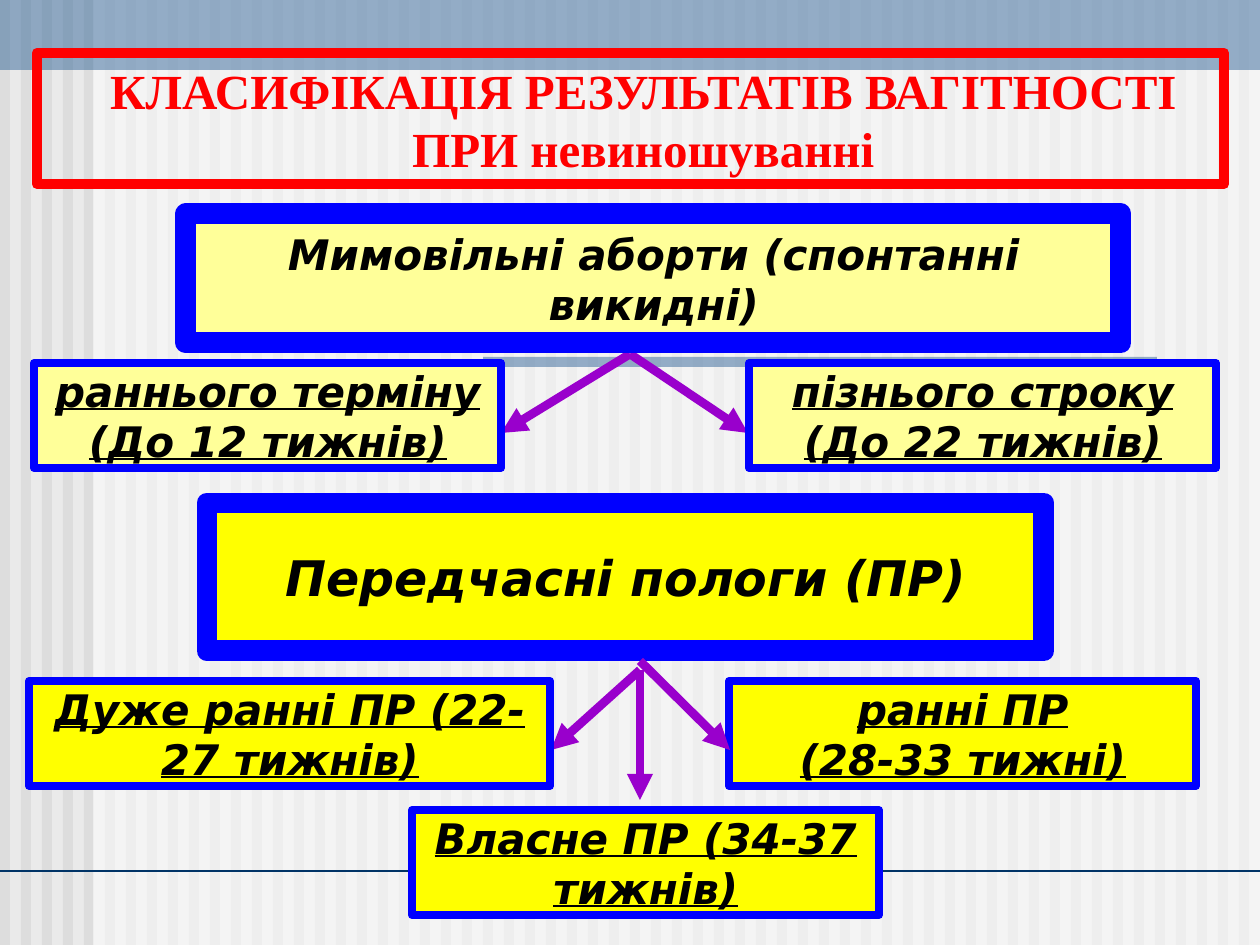
"""Build a slide that classifies pregnancy outcomes in miscarriage."""
import lxml.etree
import pptx
import pptx.dml.color
import pptx.enum.shapes
import pptx.enum.text
import pptx.oxml.ns
import pptx.util

SCALE = 914400 / 126
THEME = {
    "background": "EAEAEA", "stripe": "DDDDDD", "veil": "FFFFFF", "band": "336699", "rule": "003366",
    "title": "FF0000", "border": "0000FF", "arrow": "9900CC", "text": "000000",
    "abortion": "FFFF99", "preterm": "FFFF00",
    "title_font": "Times New Roman", "body_font": "DejaVu Sans", "large": 28, "normal": 24,
}
RGB = pptx.dml.color.RGBColor.from_string
A = pptx.oxml.ns.nsdecls("a").split('"')[1]


def add_box(bounds, fill=None, border=None, weight=0, alpha=None, text="", margin_left=13, anchor="MIDDLE", **font):
    box = slide.shapes.add_shape(pptx.enum.shapes.MSO_SHAPE.RECTANGLE, *[round(n * SCALE) for n in bounds])
    box.shadow.inherit = False
    if fill:
        box.fill.solid()
        box.fill.fore_color.rgb = RGB(THEME[fill])
    else:
        box.fill.background()
    if alpha:
        colour = box.fill._xPr.find(f".//{{{A}}}srgbClr")
        lxml.etree.SubElement(colour, f"{{{A}}}alpha", val=str(alpha * 1000))
    if border:
        box.line.color.rgb = RGB(THEME[border])
        box.line.width = pptx.util.Pt(weight)
    else:
        box.line.fill.background()
    if text:
        frame = box.text_frame
        frame.word_wrap = True
        frame.margin_left = round(margin_left * SCALE)
        frame.vertical_anchor = pptx.enum.text.MSO_ANCHOR[anchor]
        frame.text = text
        style = {"name": THEME["body_font"], "bold": True, "italic": True} | font
        style["size"] = pptx.util.Pt(THEME[style["size"]])
        colour = THEME[style.pop("colour", "text")]
        for paragraph in frame.paragraphs:
            paragraph.alignment = pptx.enum.text.PP_ALIGN.CENTER
            for run in paragraph.runs:
                run.font.color.rgb = RGB(colour)
                for key, value in style.items():
                    setattr(run.font, key, value)


def add_line(points, colour, weight, arrow=False):
    line = slide.shapes.add_connector(pptx.enum.shapes.MSO_CONNECTOR.STRAIGHT, *[round(n * SCALE) for n in points])
    line.line.color.rgb = RGB(THEME[colour])
    line.line.width = pptx.util.Pt(weight)
    if arrow:
        lxml.etree.SubElement(line.line._get_or_add_ln(), f"{{{A}}}tailEnd", type="triangle")
    lxml.etree.SubElement(line._element.spPr, f"{{{A}}}effectLst")


deck = pptx.Presentation()
deck.slide_width = round(1260 * SCALE)
deck.slide_height = round(945 * SCALE)
slide = deck.slides.add_slide(deck.slide_layouts[6])
slide.background.fill.solid()
slide.background.fill.fore_color.rgb = RGB(THEME["background"])

for column in range(60):
    add_box((column * 21, 0, 10, 945), "stripe")
add_box((93, 0, 1167, 945), "veil", alpha=50)
add_box((0, 0, 1260, 70), "band", alpha=50)
add_box((483, 357, 674, 10), "band", alpha=50)
add_line((0, 871, 1260, 871), "rule", 1.5)

add_box((37, 53, 1187, 131), border="title", weight=6, text="КЛАСИФІКАЦІЯ РЕЗУЛЬТАТІВ ВАГІТНОСТІ ПРИ невиношуванні",
        margin_left=38, anchor="BOTTOM", name=THEME["title_font"], size="large", colour="title", italic=False)

for branch in ((630, 354, 501, 433), (640, 670, 551, 750), (640, 670, 640, 800), (630, 354, 748, 433)):
    add_line(branch, "arrow", 5, arrow=True)

groups = [
    ((186, 214, 935, 129), "abortion", "normal", "Мимовільні аборти (спонтанні викидні)"),
    ((207, 503, 837, 148), "preterm", "large", "Передчасні пологи (ПР)"),
]
for bounds, fill, size, label in groups:
    add_box(bounds, fill, "border", 12, text=label, size=size)

outcomes = [
    (34, 363, 467, "abortion", "раннього терміну\n(До 12 тижнів)"),
    (749, 363, 467, "abortion", "пізнього строку\n(До 22 тижнів)"),
    (29, 681, 521, "preterm", "Дуже ранні ПР (22-27 тижнів)"),
    (729, 681, 467, "preterm", "ранні ПР\n(28-33 тижні)"),
    (412, 810, 467, "preterm", "Власне ПР (34-37 тижнів)"),
]
for left, top, width, fill, label in outcomes:
    add_box((left, top, width, 105), fill, "border", 4.5, text=label, size="normal", underline=True)

add_line((640, 661, 730, 750), "arrow", 5, arrow=True)

deck.save("out.pptx")
